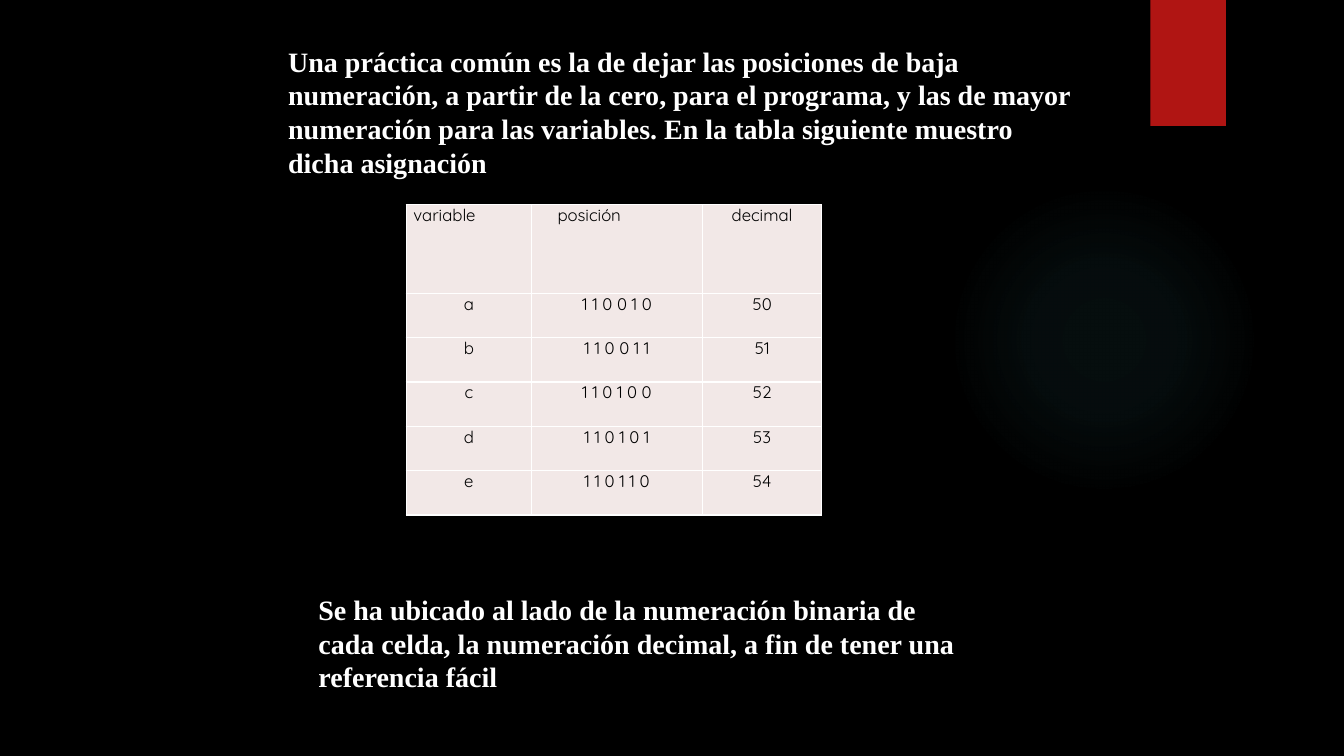
import pptx
import pptx.dml.color
import pptx.enum.shapes
import pptx.enum.text
import pptx.oxml
import pptx.oxml.ns
import pptx.util
from pptx.util import Inches

RGBColor = pptx.dml.color.RGBColor
BLACK = RGBColor(0x00, 0x00, 0x00)
WHITE = RGBColor(0xFF, 0xFF, 0xFF)
RED = RGBColor(0xB0, 0x15, 0x13)
TEAL = RGBColor(0x50, 0xB9, 0xC1)
CELL_FILL = RGBColor(0xF2, 0xE8, 0xE7)
CENTER = pptx.enum.text.PP_ALIGN.CENTER
LEFT = pptx.enum.text.PP_ALIGN.LEFT
SHAPES = pptx.enum.shapes.MSO_SHAPE
NAMESPACE = pptx.oxml.ns.nsdecls("a")

INTRODUCTION = (
    "Una práctica común es la de dejar las posiciones de baja numeración, "
    "a partir de la cero, para el programa, y las de mayor numeración para "
    "las variables. En la tabla siguiente muestro dicha asignación"
)
CONCLUSION = (
    "Se ha ubicado al lado de la numeración binaria de cada celda, "
    "la numeración decimal, a fin de tener una referencia fácil"
)
HEADINGS = ["variable", "posición", "decimal"]
POSITIONS = {"a": 50, "b": 51, "c": 52, "d": 53, "e": 54}
COLUMN_WIDTHS = [1.24, 1.7, 1.18]
HEADING_HEIGHT, ROW_HEIGHT = 0.88, 0.44


def add_glow(slide, left, top, size):
    """Add the faint round glow behind the content."""
    glow = slide.shapes.add_shape(
        SHAPES.OVAL, Inches(left), Inches(top), Inches(size), Inches(size))
    glow.shadow.inherit = False
    glow.line.fill.background()
    glow.fill.background()
    stops = "".join(
        f'<a:gs pos="{position * 1000}"><a:srgbClr val="{TEAL}">'
        f'<a:alpha val="{opacity * 1000}"/></a:srgbClr></a:gs>'
        for position, opacity in [(0, 7), (36, 6), (69, 0)])
    gradient = pptx.oxml.parse_xml(
        f'<a:gradFill {NAMESPACE}><a:gsLst>{stops}</a:gsLst><a:path path="circle">'
        '<a:fillToRect l="50000" t="50000" r="50000" b="50000"/>'
        '</a:path></a:gradFill>')
    properties = glow.element.spPr
    properties.replace(properties.find(pptx.oxml.ns.qn("a:noFill")), gradient)


def add_ribbon(slide, left, top, width, height):
    """Add the red ribbon with its soft shadow."""
    ribbon = slide.shapes.add_shape(
        SHAPES.RECTANGLE, Inches(left), Inches(top), Inches(width), Inches(height))
    ribbon.shadow.inherit = False
    ribbon.fill.solid()
    ribbon.fill.fore_color.rgb = RED
    ribbon.line.fill.background()
    effects = ribbon.element.spPr.find(pptx.oxml.ns.qn("a:effectLst"))
    effects.append(pptx.oxml.parse_xml(
        f'<a:outerShdw {NAMESPACE} blurRad="38100" dist="25400" dir="5400000" '
        f'rotWithShape="0"><a:srgbClr val="{BLACK}"><a:alpha val="45000"/>'
        '</a:srgbClr></a:outerShdw>'))


def add_statement(slide, text, left, top, width, height):
    """Add a bold white paragraph in its box."""
    box = slide.shapes.add_textbox(
        Inches(left), Inches(top), Inches(width), Inches(height))
    box.text_frame.word_wrap = True
    para = box.text_frame.paragraphs[0]
    para.text = text
    para.font.name = "Times New Roman"
    para.font.size = pptx.util.Pt(20)
    para.font.bold = True
    para.font.color.rgb = WHITE


def fill_cell(cell, text, alignment, indent):
    """Write one table cell with its fill and white borders."""
    cell.margin_left = Inches(0.07 + indent)
    cell.margin_right = Inches(0.07)
    cell.margin_top = cell.margin_bottom = 0
    cell.fill.solid()
    cell.fill.fore_color.rgb = CELL_FILL
    properties = cell._tc.get_or_add_tcPr()
    for index, side in enumerate(["lnL", "lnR", "lnT", "lnB"]):
        properties.insert(index, pptx.oxml.parse_xml(
            f'<a:{side} {NAMESPACE} w="12700"><a:solidFill>'
            f'<a:srgbClr val="{WHITE}"/></a:solidFill></a:{side}>'))
    para = cell.text_frame.paragraphs[0]
    para.text = text
    para.alignment = alignment
    para.font.name = "Quicksand"
    para.font.size = pptx.util.Pt(12)
    para.font.bold = False
    para.font.color.rgb = BLACK


def add_position_table(slide, left, top):
    """Add the table of variables with binary and decimal positions."""
    rows = [HEADINGS] + [
        [name, " ".join(format(number, "b")), str(number)]
        for name, number in POSITIONS.items()]
    heights = [HEADING_HEIGHT] + [ROW_HEIGHT] * len(POSITIONS)
    table = slide.shapes.add_table(
        len(rows), len(HEADINGS), Inches(left), Inches(top),
        Inches(sum(COLUMN_WIDTHS)), Inches(sum(heights))).table
    for column, width in zip(table.columns, COLUMN_WIDTHS):
        column.width = Inches(width)
    for row_index, (values, height) in enumerate(zip(rows, heights)):
        table.rows[row_index].height = Inches(height)
        for column_index, text in enumerate(values):
            alignment = LEFT if text in HEADINGS[:2] else CENTER
            indent = 0.19 if text == "posición" else 0
            fill_cell(table.cell(row_index, column_index), text, alignment, indent)


def build_slide(deck):
    """Build the slide on memory positions."""
    slide = deck.slides.add_slide(deck.slide_layouts[6])
    slide.background.fill.solid()
    slide.background.fill.fore_color.rgb = BLACK
    add_glow(slide, 9.41, 1.83, 3.08)
    add_ribbon(slide, 11.41, 0, 0.75, 1.25)
    add_position_table(slide, 4.03, 2.03)
    add_statement(slide, INTRODUCTION, 2.76, 0.39, 8.04, 1.45)
    add_statement(slide, CONCLUSION, 3.06, 5.83, 6.67, 1.11)


def main():
    """Create the deck and save it."""
    deck = pptx.Presentation()
    deck.slide_width = Inches(13.33)
    deck.slide_height = Inches(7.5)
    build_slide(deck)
    deck.save("out.pptx")


if __name__ == "__main__":
    main()
